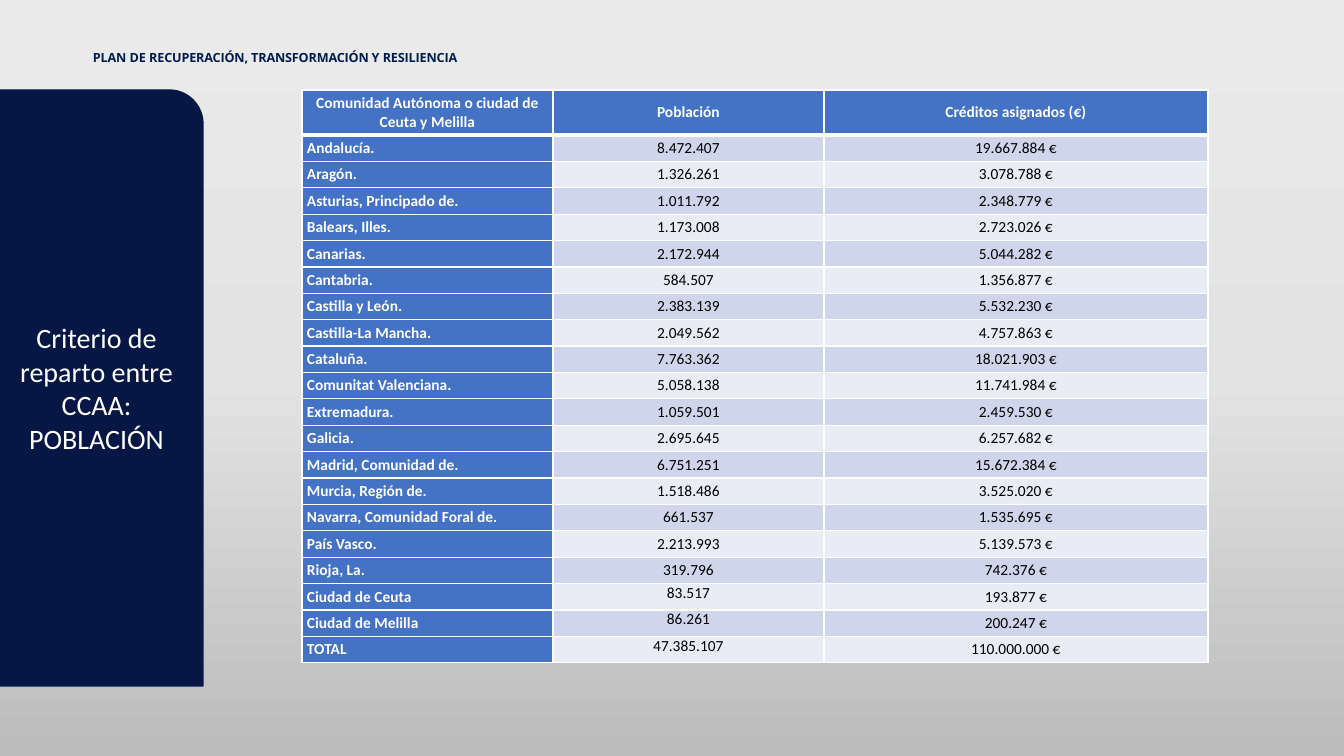
from lxml.etree import SubElement
from pptx import Presentation
from pptx.dml.color import RGBColor
from pptx.enum.shapes import MSO_SHAPE
from pptx.enum.text import MSO_ANCHOR, PP_ALIGN
from pptx.oxml import parse_xml
from pptx.oxml.ns import nsdecls, qn
from pptx.util import Pt

NAVY = RGBColor(0x06, 0x17, 0x45)
TITLE_BLUE = RGBColor(0x00, 0x1D, 0x4D)
BLUE = RGBColor(0x44, 0x72, 0xC4)
BAND_DARK = RGBColor(0xCF, 0xD5, 0xEA)
BAND_LIGHT = RGBColor(0xE9, 0xEB, 0xF5)
WHITE = RGBColor(0xFF, 0xFF, 0xFF)
BLACK = RGBColor(0x00, 0x00, 0x00)
BACKGROUND_STOPS = [
    (0, RGBColor(0xEB, 0xEA, 0xEA)),
    (50, RGBColor(0xE4, 0xE3, 0xE3)),
    (100, RGBColor(0xBD, 0xBC, 0xBC)),
]

HEADINGS = ("Comunidad Autónoma o ciudad de Ceuta y Melilla", "Población", "Créditos asignados (€)")
REGIONS = [
    ("Andalucía.", "8.472.407", "19.667.884 €"),
    ("Aragón.", "1.326.261", "3.078.788 €"),
    ("Asturias, Principado de.", "1.011.792", "2.348.779 €"),
    ("Balears, Illes.", "1.173.008", "2.723.026 €"),
    ("Canarias.", "2.172.944", "5.044.282 €"),
    ("Cantabria.", "584.507", "1.356.877 €"),
    ("Castilla y León.", "2.383.139", "5.532.230 €"),
    ("Castilla-La Mancha.", "2.049.562", "4.757.863 €"),
    ("Cataluña.", "7.763.362", "18.021.903 €"),
    ("Comunitat Valenciana.", "5.058.138", "11.741.984 €"),
    ("Extremadura.", "1.059.501", "2.459.530 €"),
    ("Galicia.", "2.695.645", "6.257.682 €"),
    ("Madrid, Comunidad de.", "6.751.251", "15.672.384 €"),
    ("Murcia, Región de.", "1.518.486", "3.525.020 €"),
    ("Navarra, Comunidad Foral de.", "661.537", "1.535.695 €"),
    ("País Vasco.", "2.213.993", "5.139.573 €"),
    ("Rioja, La.", "319.796", "742.376 €"),
    ("Ciudad de Ceuta", "83.517", "193.877 €"),
    ("Ciudad de Melilla", "86.261", "200.247 €"),
    ("TOTAL", "47.385.107", "110.000.000 €"),
]
FIRST_TOP_ANCHORED_ROW = 18


def px(length):
    """Turn slide pixels (100.8 to the inch) into EMU."""
    return round(length * 914400 / 100.8)


def add_span(para, text, font_name, size, color, bold=False):
    span = para.add_run()
    span.text = text
    span.font.name = font_name
    span.font.size = Pt(size)
    span.font.bold = bold
    span.font.color.rgb = color
    return span


deck = Presentation()
deck.slide_width, deck.slide_height = px(1344), px(756)
page = deck.slides.add_slide(deck.slide_layouts[6])

# Background gradient, top to bottom
stops = "".join(
    f'<a:gs pos="{percent * 1000}"><a:srgbClr val="{color}"/></a:gs>'
    for percent, color in BACKGROUND_STOPS
)
background = parse_xml(
    f'<p:bg {nsdecls("p", "a")}><p:bgPr><a:gradFill rotWithShape="1"><a:gsLst>{stops}</a:gsLst>'
    '<a:lin ang="5400000" scaled="0"/></a:gradFill><a:effectLst/></p:bgPr></p:bg>'
)
page.element.cSld.insert(0, background)

# Plan name
plan_box = page.shapes.add_textbox(px(93), px(48), px(445), px(17))
frame = plan_box.text_frame
frame.word_wrap = True
frame.margin_left = frame.margin_right = frame.margin_bottom = 0
frame.margin_top = px(2)
for text, spacing in [
    ("PLAN ", -10),
    ("DE ", 0),
    ("RECUPERACIÓN, TRANSFORMACIÓN ", -10),
    ("Y ", 0),
    ("RESILIENCIA", -10),
]:
    span = add_span(frame.paragraphs[0], text, "Open Sans", 9, TITLE_BLUE, bold=True)
    span.font._element.set("spc", str(spacing))

# Table of regions
column_widths = [251, 271, 384]
header_height, body_height = 45, 528
table = page.shapes.add_table(
    len(REGIONS) + 1, len(HEADINGS), px(302), px(90),
    px(sum(column_widths)), px(header_height + body_height),
).table
for column, width in zip(table.columns, column_widths):
    column.width = px(width)
for row in table.rows:
    row.height = px(body_height / len(REGIONS))
table.rows[0].height = px(header_height)

for row_index, values in enumerate([HEADINGS, *REGIONS]):
    for column_index, value in enumerate(values):
        is_heading = row_index == 0
        is_name = column_index == 0
        is_label = is_heading or is_name
        cell = table.cell(row_index, column_index)
        cell.margin_left = cell.margin_right = px(5)
        cell.margin_top = cell.margin_bottom = 0
        top_anchored = column_index == 1 and row_index >= FIRST_TOP_ANCHORED_ROW
        cell.vertical_anchor = MSO_ANCHOR.TOP if top_anchored else MSO_ANCHOR.MIDDLE

        properties = cell._tc.get_or_add_tcPr()
        for side in "LRTB":
            thick = (is_heading and side == "B") or (row_index == 1 and side == "T")
            border = SubElement(properties, qn(f"a:ln{side}"), w=str(Pt(3 if thick else 1)))
            fill = SubElement(border, qn("a:solidFill"))
            SubElement(fill, qn("a:srgbClr"), val=str(WHITE))
        cell.fill.solid()
        band = BAND_DARK if row_index % 2 else BAND_LIGHT
        cell.fill.fore_color.rgb = BLUE if is_label else band

        para = cell.text_frame.paragraphs[0]
        para.alignment = PP_ALIGN.JUSTIFY if is_name and not is_heading else PP_ALIGN.CENTER
        add_span(para, value, "Calibri", 11, WHITE if is_label else BLACK, bold=is_label)

# Side panel
panel = page.shapes.add_shape(MSO_SHAPE.ROUND_1_RECTANGLE, 0, px(90), px(203), px(596))
panel.shadow.inherit = False
panel.fill.solid()
panel.fill.fore_color.rgb = NAVY
panel.line.color.rgb = NAVY
panel.line.width = Pt(1)
panel.text_frame.word_wrap = True
panel.text_frame.vertical_anchor = MSO_ANCHOR.MIDDLE
para = panel.text_frame.paragraphs[0]
para.alignment = PP_ALIGN.CENTER
add_span(para, "Criterio de reparto entre CCAA: POBLACIÓN", "Calibri", 20, WHITE)

deck.save("out.pptx")
